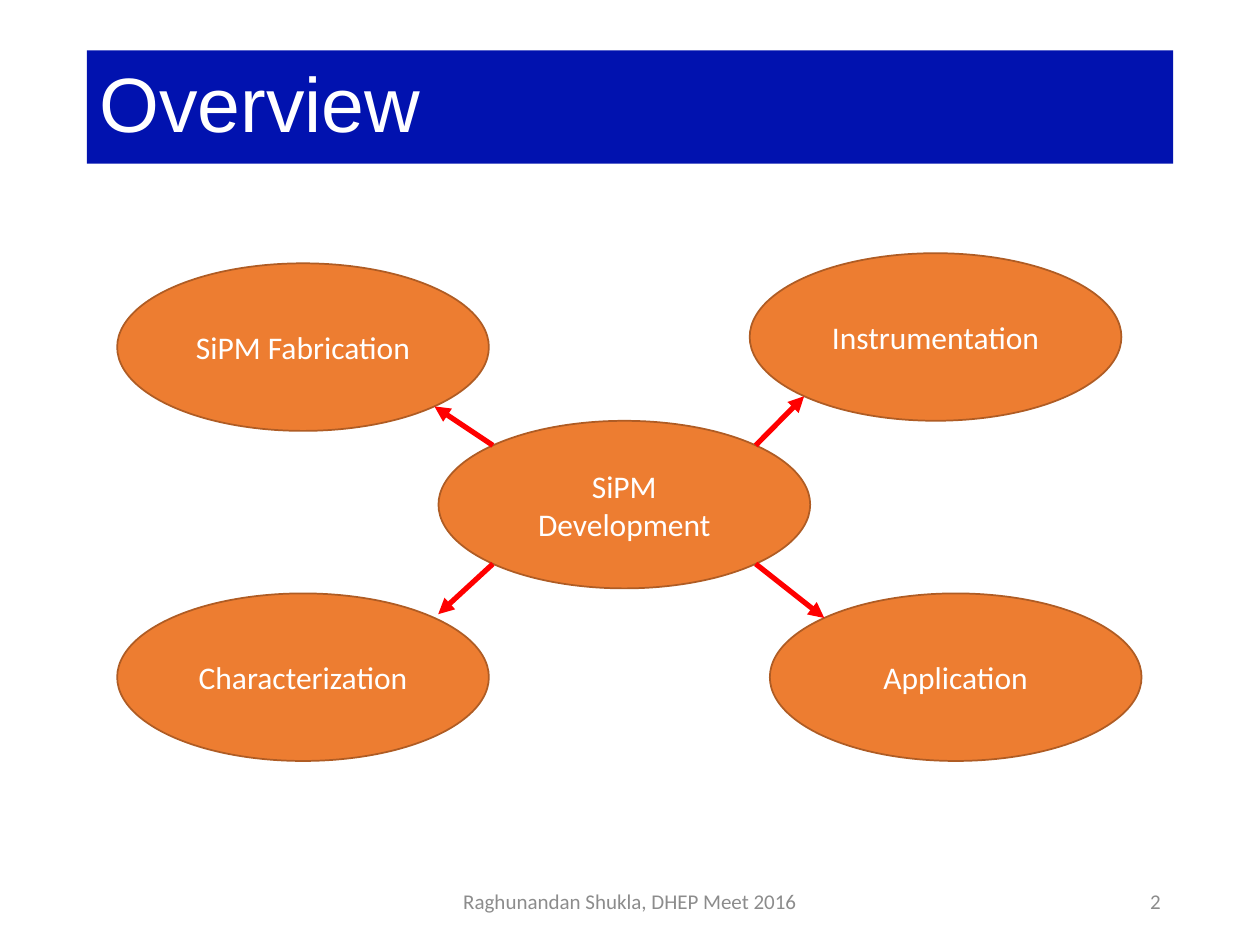
from math import sqrt

from lxml.etree import SubElement
from pptx import Presentation
from pptx.dml.color import RGBColor
from pptx.enum.shapes import MSO_CONNECTOR as Link, MSO_SHAPE as Shape
from pptx.enum.text import MSO_ANCHOR as Anchor, PP_ALIGN as Align
from pptx.oxml.ns import qn
from pptx.util import Inches, Pt

BLUE = RGBColor(0x01, 0x12, 0xAF)
ORANGE = RGBColor(0xED, 0x7D, 0x31)
BROWN = RGBColor(0xAF, 0x5C, 0x24)
RED = RGBColor(0xFF, 0x00, 0x00)
GRAY = RGBColor(0x8C, 0x8C, 0x8C)
WHITE = RGBColor(0xFF, 0xFF, 0xFF)

WIDE, HIGH = 2.95, 1.33  # size of every oval
HUB = (3.48, 3.34)
# label, left, top, side of the hub (x, y), shift of the arrow tip
TOPICS = [
    ("SiPM Fabrication", 0.93, 2.09, -1, -1, (0, 0)),
    ("Instrumentation", 5.95, 2.01, 1, -1, (0, 0)),
    ("Characterization", 0.93, 4.71, -1, 1, (0.03, -0.03)),
    ("Application", 6.11, 4.71, 1, 1, (0, 0)),
]


def write(shape, text, size=18, font="Calibri", color=WHITE,
          align=Align.CENTER, space=None):
    frame = shape.text_frame
    frame.word_wrap = True
    frame.vertical_anchor = Anchor.MIDDLE
    para = frame.paragraphs[0]
    para.text = text
    para.alignment = align
    para.line_spacing = space
    para.font.size = Pt(size)
    para.font.name = font
    para.font.color.rgb = color


def corner(left, top, side_x, side_y):
    """Point on an oval's outline, on its diagonal toward the given side."""
    return (left + WIDE / 2 * (1 + side_x / sqrt(2)),
            top + HIGH / 2 * (1 + side_y / sqrt(2)))


class Board:
    def __init__(self, slide):
        self.slide = slide
        self.fill, self.edge, self.arrow = ORANGE, BROWN, RED

    def title(self, text, *box):
        bar = self.slide.shapes.add_shape(Shape.RECTANGLE, *map(Inches, box))
        bar.shadow.inherit = False
        bar.fill.solid()
        bar.fill.fore_color.rgb = BLUE
        bar.line.fill.background()
        write(bar, text, size=44, font="Arial", align=Align.LEFT, space=0.9)

    def note(self, text, *box, align=Align.CENTER):
        area = self.slide.shapes.add_textbox(*map(Inches, box))
        write(area, text, size=12, color=GRAY, align=align)

    def oval(self, text, left, top):
        box = map(Inches, (left, top, WIDE, HIGH))
        oval = self.slide.shapes.add_shape(Shape.OVAL, *box)
        oval.shadow.inherit = False
        oval.fill.solid()
        oval.fill.fore_color.rgb = self.fill
        oval.line.color.rgb = self.edge
        oval.line.width = Pt(1)
        write(oval, text)

    def point(self, start, tip):
        line = self.slide.shapes.add_connector(
            Link.STRAIGHT, *map(Inches, (*start, *tip)))
        line.line.color.rgb = self.arrow
        line.line.width = Pt(3)
        SubElement(line.line._get_or_add_ln(), qn("a:tailEnd"), type="triangle")
        SubElement(line._element.spPr, qn("a:effectLst"))


def main():
    deck = Presentation()
    deck.slide_width, deck.slide_height = Inches(10), Inches(7.5)
    board = Board(deck.slides.add_slide(deck.slide_layouts[6]))

    # Title and footer
    board.title("Overview", 0.69, 0.4, 8.62, 0.9)
    board.note("Raghunandan Shukla, DHEP Meet 2016", 3.31, 6.95, 3.38, 0.4)
    board.note("2", 7.06, 6.95, 2.25, 0.4, align=Align.RIGHT)

    # Hub and topics
    board.oval("SiPM Development", *HUB)
    for text, left, top, *_ in TOPICS:
        board.oval(text, left, top)

    # Arrows from the hub to each topic
    for _, left, top, side_x, side_y, (dx, dy) in TOPICS:
        x, y = corner(left, top, -side_x, -side_y)
        board.point(corner(*HUB, side_x, side_y), (x + dx, y + dy))

    deck.save("out.pptx")


if __name__ == "__main__":
    main()
